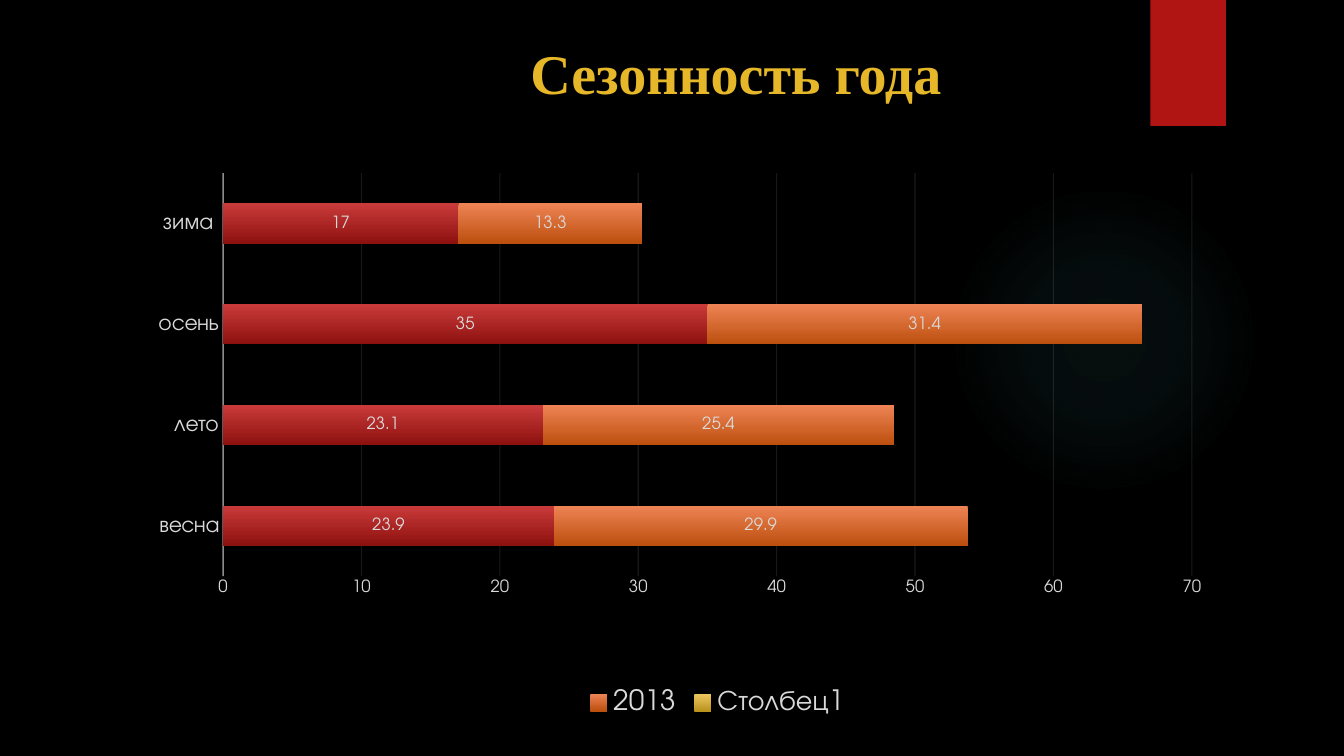
from dataclasses import dataclass
from typing import Any

from lxml.etree import SubElement
from pptx import Presentation
from pptx.chart.data import CategoryChartData as Data
from pptx.dml.color import RGBColor
from pptx.enum.chart import XL_CHART_TYPE as Kind
from pptx.enum.chart import XL_LABEL_POSITION as Spot
from pptx.enum.chart import XL_LEGEND_POSITION as Side
from pptx.enum.chart import XL_TICK_MARK as Tick
from pptx.enum.shapes import MSO_SHAPE as Shape
from pptx.enum.text import MSO_ANCHOR as Anchor
from pptx.enum.text import PP_ALIGN as Align
from pptx.oxml import parse_xml
from pptx.oxml.ns import nsdecls, qn
from pptx.util import Inches, Pt

BLACK = RGBColor(0x00, 0x00, 0x00)
RED = RGBColor(0xB0, 0x15, 0x13)
GOLD = RGBColor(0xE6, 0xB7, 0x29)
GLOW = RGBColor(0x50, 0xB9, 0xC1)
PALE = RGBColor(0xD9, 0xD9, 0xD9)
LINE = RGBColor(0xF2, 0xF2, 0xF2)
SANS = "TeX Gyre Adventor"


@dataclass
class Series:
    name: str
    vals: tuple
    top: RGBColor
    end: RGBColor


SEASONS = ("весна ", "лето", "осень", "зима ")
SERIES = (
    Series("", (23.9, 23.1, 35, 17),
           RGBColor(0xC9, 0x3B, 0x3A), RGBColor(0x8D, 0x11, 0x0F)),
    Series("2013", (29.9, 25.4, 31.4, 13.3),
           RGBColor(0xEE, 0x84, 0x55), RGBColor(0xBC, 0x4F, 0x0E)),
    Series("Столбец1", (None,) * 4,
           RGBColor(0xEB, 0xC6, 0x5F), RGBColor(0xBB, 0x94, 0x1F)),
)


def apply(item: Any, **form: Any) -> None:
    for key, val in form.items():
        setattr(item, key, val)


def style(font: Any, size: float, color: RGBColor = PALE,
          name: str = SANS, bold: bool = False) -> None:
    apply(font, size=Pt(size), name=name, bold=bold)
    font.color.rgb = color


def box(left: float, top: float, width: float, height: float) -> tuple:
    return tuple(Inches(n) for n in (left, top, width, height))


def rule(line: Any, width: float, alpha: int) -> None:
    line.width = Pt(width)
    line.color.rgb = LINE
    tint = next(line.fill._xPr.iter(qn("a:srgbClr")))
    SubElement(tint, qn("a:alpha"), val=str(alpha * 1000))


def place(owner: Any, **frame: Any) -> None:
    for old in owner.findall(qn("c:layout")):
        owner.remove(old)
    layout = parse_xml(f"<c:layout {nsdecls('c')}/>")
    manual = SubElement(layout, qn("c:manualLayout"))
    for key, val in frame.items():
        SubElement(manual, qn("c:" + key), val=str(val))
    mark = owner.findall(qn("c:legendPos")) + owner.findall(qn("c:legendEntry"))
    if mark:
        mark[-1].addnext(layout)
    else:
        owner.insert(0, layout)


def add_shape(slide: Any, kind: Any, frame: tuple, color: RGBColor) -> Any:
    shape = slide.shapes.add_shape(kind, *frame)
    shape.shadow.inherit = False
    shape.fill.solid()
    shape.fill.fore_color.rgb = color
    shape.line.fill.background()
    return shape


def add_glow(slide: Any) -> None:
    glow = add_shape(slide, Shape.OVAL, box(9.41, 1.83, 3.08, 3.08), GLOW)
    stops = "".join(
        f'<a:gs pos="{pos * 1000}"><a:srgbClr val="{GLOW}">'
        f'<a:alpha val="{alpha * 1000}"/></a:srgbClr></a:gs>'
        for pos, alpha in ((0, 7), (36, 6), (69, 0)))
    grad = parse_xml(
        f'<a:gradFill {nsdecls("a")}><a:gsLst>{stops}</a:gsLst>'
        '<a:path path="circle"><a:fillToRect l="50000" t="50000" '
        'r="50000" b="50000"/></a:path></a:gradFill>')
    props = glow._element.spPr
    props.replace(props.find(qn("a:solidFill")), grad)


def add_title(slide: Any) -> None:
    title = slide.shapes.title
    left, top, width, height = box(5.16, 0.33, 5.15, 0.77)
    apply(title, left=left, top=top, width=width, height=height)
    apply(title.text_frame, text="Сезонность года", word_wrap=True,
          vertical_anchor=Anchor.TOP)
    para = title.text_frame.paragraphs[0]
    para.alignment = Align.LEFT
    style(para.runs[0].font, 40, GOLD, "Times New Roman", True)


def add_chart(slide: Any) -> None:
    data = Data()
    data.categories = SEASONS
    for item in SERIES:
        data.add_series(item.name, item.vals)
    chart = slide.shapes.add_chart(
        Kind.BAR_STACKED, *box(1.57, 1.55, 10.46, 5.63), data).chart
    apply(chart, has_title=False, has_legend=True)
    style(chart.font, 10)

    plot = chart.plots[0]
    apply(plot, gap_width=150, overlap=100, vary_by_categories=False)
    for bar, item in zip(plot.series, SERIES):
        fill = bar.format.fill
        fill.gradient()
        fill.gradient_angle = 270
        for stop, color in zip(fill.gradient_stops, (item.top, item.end)):
            stop.color.rgb = color
        bar.format.line.fill.background()
        apply(bar.data_labels, show_value=True, position=Spot.CENTER)
        style(bar.data_labels.font, 12)

    cats, vals = chart.category_axis, chart.value_axis
    for axis, size in ((cats, 16), (vals, 12)):
        apply(axis, major_tick_mark=Tick.NONE, minor_tick_mark=Tick.NONE)
        style(axis.tick_labels.font, size)
    cats.has_major_gridlines = False
    rule(cats.format.line, 1, 54)
    apply(vals, has_major_gridlines=True, minimum_scale=0,
          maximum_scale=70, major_unit=10)
    vals.format.line.fill.background()
    rule(vals.major_gridlines.format.line, 0.75, 10)

    legend = chart.legend
    apply(legend, position=Side.BOTTOM, include_in_layout=False)
    style(legend.font, 20)
    root = legend._element
    entry = parse_xml(
        f'<c:legendEntry {nsdecls("c")}><c:idx val="2"/>'
        '<c:delete val="1"/></c:legendEntry>')
    root.find(qn("c:legendPos")).addnext(entry)
    place(root, xMode="edge", yMode="edge", x=0.4, y=0.93)
    area = chart._chartSpace.chart.plotArea
    place(area, layoutTarget="inner", xMode="edge", yMode="edge",
          x=0.06, y=0.03, w=0.92, h=0.71)


def main() -> None:
    deck = Presentation()
    apply(deck, slide_width=Inches(13.33), slide_height=Inches(7.5))
    slide = deck.slides.add_slide(deck.slide_layouts[5])
    back = slide.background.fill
    back.solid()
    back.fore_color.rgb = BLACK
    add_glow(slide)
    add_shape(slide, Shape.RECTANGLE, box(11.41, 0, 0.75, 1.25), RED)
    add_chart(slide)
    add_title(slide)
    deck.save("out.pptx")


if __name__ == "__main__":
    main()
